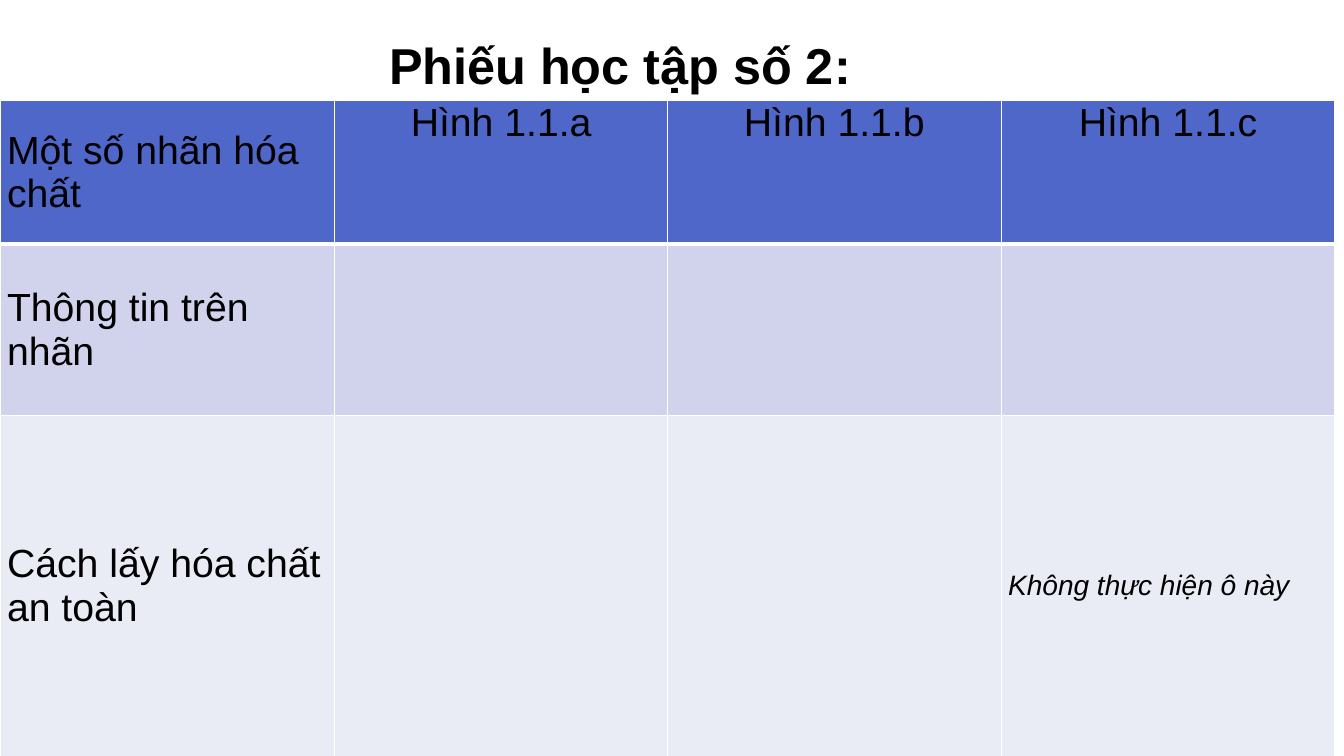
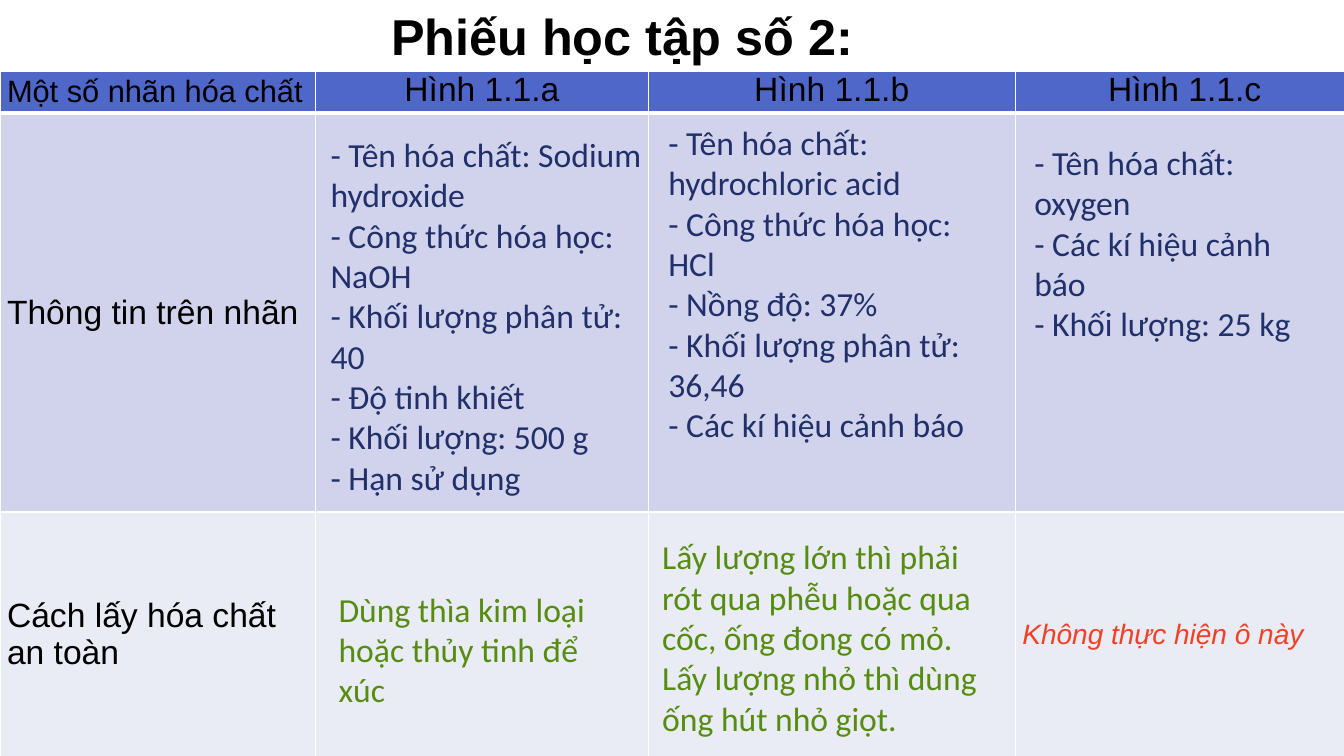
from dataclasses import dataclass

from lxml import etree
from pptx import Presentation
from pptx.dml.color import RGBColor
from pptx.enum import text as t
from pptx.oxml import ns
from pptx.util import Inches, Pt


@dataclass(frozen=True)
class Theme:
    black: str = "000000"
    border: str = "FFFFFF"
    row_fills: tuple = ("4E67C8", "D0D3EB", "E9EBF5")
    info: str = "21306A"
    handling: str = "568D11"
    warning: str = "F14124"
    sheet_font: str = "Arial"
    answer_font: str = "Calibri"
    title_size: int = 36
    answer_size: int = 24
    skip_size: int = 20


THEME = Theme()
TITLE = "Phiếu học tập số 2:"
TITLE_SIZE = (6.34, 0.71)
SKIPPED = "Không thực hiện ô này"
WORKSHEET = [
    ["Một số nhãn hóa chất", "Hình 1.1.a", "Hình 1.1.b", "Hình 1.1.c"],
    ["Thông tin trên nhãn", "", "", ""],
    ["Cách lấy hóa chất an toàn", "", "", SKIPPED],
]

# Answers: (left, top, width, height), colour, paragraphs
ANSWERS = [
    ((3.18, 1.28, 3.3, 3.73), THEME.info, [
        "- Tên hóa chất: Sodium hydroxide",
        "- Công thức hóa học: NaOH",
        "- Khối lượng phân tử: 40",
        "- Độ tinh khiết",
        "- Khối lượng: 500 g",
        "- Hạn sử dụng",
    ]),
    ((3.26, 5.79, 2.88, 1.31), THEME.handling, [
        "Dùng thìa kim loại hoặc thủy tinh để xúc",
    ]),
    ((6.53, 1.16, 3.42, 3.33), THEME.info, [
        "- Tên hóa chất: hydrochloric acid",
        "- Công thức hóa học: HCl",
        "- Nồng độ: 37%",
        "- Khối lượng phân tử:",
        "36,46",
        "- Các kí hiệu cảnh báo",
    ]),
    ((6.47, 5.27, 3.6, 2.12), THEME.handling, [
        "Lấy lượng lớn thì phải rót qua phễu hoặc qua cốc, ống đong có mỏ.",
        "Lấy lượng nhỏ thì dùng ống hút nhỏ giọt.",
    ]),
    ((10.16, 1.36, 2.8, 2.12), THEME.info, [
        "- Tên hóa chất: oxygen",
        "- Các kí hiệu cảnh báo",
        "- Khối lượng: 25 kg",
    ]),
]

SLIDES = [
    dict(title_at=(3.71, 0.29), table_top=1, columns=[3.32, 3.3, 3.31, 3.31],
         rows=[1.42, 1.7, 3.39], corner_size=28, label_size=28,
         skip_color=THEME.black, answers=[]),
    dict(title_at=(3.73, 0), table_top=0.71, columns=[3.13, 3.3, 3.64, 3.36],
         rows=[0.41, 3.96, 2.43], corner_size=22, label_size=24,
         skip_color=THEME.warning, answers=ANSWERS),
]


def style(paragraph, font_name, size, color, bold=False, italic=False):
    font = paragraph.font
    font.name, font.size = font_name, Pt(size)
    font.bold, font.italic = bold, italic
    font.color.rgb = RGBColor.from_string(color)


def add_title(slide, at):
    title = slide.shapes.title
    title.left, title.top, title.width, title.height = map(Inches, at + TITLE_SIZE)
    frame = title.text_frame
    frame.text = TITLE
    frame.auto_size = t.MSO_AUTO_SIZE.NONE
    frame.vertical_anchor = t.MSO_ANCHOR.TOP
    frame.margin_left = Inches(0.15)
    frame.paragraphs[0].alignment = t.PP_ALIGN.LEFT
    style(frame.paragraphs[0], THEME.sheet_font, THEME.title_size, THEME.black, bold=True)


def set_borders(cell, top, bottom):
    properties = cell._tc.get_or_add_tcPr()
    for index, (edge, width) in enumerate(
            [("lnL", 1), ("lnR", 1), ("lnT", top), ("lnB", bottom)]):
        line = etree.Element(ns.qn(f"a:{edge}"), w=str(Pt(width)))
        fill = etree.SubElement(line, ns.qn("a:solidFill"))
        etree.SubElement(fill, ns.qn("a:srgbClr"), val=THEME.border)
        properties.insert(index, line)


def fill_cell(cell, row, column, layout):
    cell.fill.solid()
    cell.fill.fore_color.rgb = RGBColor.from_string(THEME.row_fills[row])
    set_borders(cell, top=3 if row == 1 else 1, bottom=3 if row == 0 else 1)
    wording = WORKSHEET[row][column]
    if not wording:
        return
    cell.text = wording
    cell.margin_left = cell.margin_right = Inches(0.07)
    cell.margin_top = cell.margin_bottom = 0
    paragraph = cell.text_frame.paragraphs[0]
    if row == 0 and column > 0:
        cell.vertical_anchor = t.MSO_ANCHOR.TOP
        paragraph.alignment = t.PP_ALIGN.CENTER
    else:
        cell.vertical_anchor = t.MSO_ANCHOR.MIDDLE
    if wording == SKIPPED:
        style(paragraph, THEME.sheet_font, THEME.skip_size, layout["skip_color"], italic=True)
    else:
        size = layout["corner_size"] if row == column == 0 else layout["label_size"]
        style(paragraph, THEME.sheet_font, size, THEME.black)


def add_worksheet(slide, layout):
    columns, rows = layout["columns"], layout["rows"]
    table = slide.shapes.add_table(
        len(rows), len(columns), 0, Inches(layout["table_top"]),
        Inches(sum(columns)), Inches(sum(rows))).table
    for column, width in zip(table.columns, columns):
        column.width = Inches(width)
    for r, height in enumerate(rows):
        table.rows[r].height = Inches(height)
        for c in range(len(columns)):
            fill_cell(table.cell(r, c), r, c, layout)


def add_answer(slide, box, color, lines):
    frame = slide.shapes.add_textbox(*map(Inches, box)).text_frame
    frame.word_wrap = True
    frame.text = "\n".join(lines)
    for paragraph in frame.paragraphs:
        style(paragraph, THEME.answer_font, THEME.answer_size, color)


def main():
    deck = Presentation()
    deck.slide_width, deck.slide_height = Inches(13.33), Inches(7.5)
    title_only = deck.slide_layouts.get_by_name("Title Only")
    for layout in SLIDES:
        slide = deck.slides.add_slide(title_only)
        add_title(slide, layout["title_at"])
        add_worksheet(slide, layout)
        for answer in layout["answers"]:
            add_answer(slide, *answer)
    deck.save("out.pptx")


if __name__ == "__main__":
    main()
